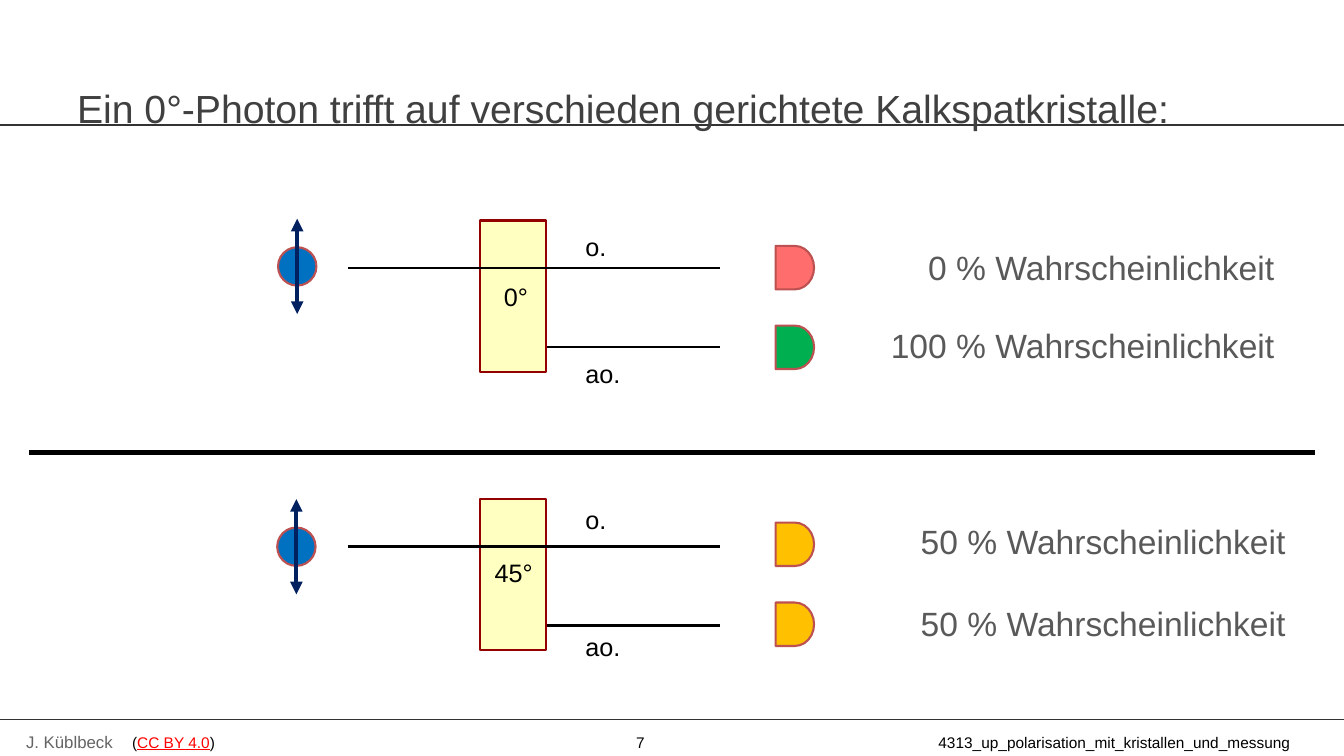
import dataclasses

import lxml.etree
import pptx
import pptx.dml.color
import pptx.enum.shapes
import pptx.enum.text
import pptx.oxml.ns
import pptx.util

Pt = pptx.util.Pt
Shape = pptx.enum.shapes.MSO_SHAPE
Align = pptx.enum.text.PP_ALIGN
Anchor = pptx.enum.text.MSO_ANCHOR


@dataclasses.dataclass(frozen=True)
class Theme:
    font: str = "Arial"
    title_size: float = 28
    result_size: float = 24
    label_size: float = 18
    author_size: float = 12
    footer_size: float = 11
    black: str = "000000"
    title: str = "404040"
    result: str = "595959"
    author: str = "646464"
    licence: str = "FF0000"
    rule: str = "333333"
    crystal: str = "FFFFC1"
    crystal_edge: str = "920000"
    photon: str = "0070C0"
    polarisation: str = "002060"
    outline: str = "BD5151"
    never: str = "FF6D6D"
    always: str = "00B050"
    maybe: str = "FFC000"


@dataclasses.dataclass(frozen=True)
class Experiment:
    angle: str
    angle_position: tuple
    crystal_top: float
    photon_center: tuple
    label_top: float
    detector_tops: tuple
    detector_colors: tuple
    results: tuple
    result_tops: tuple
    result_right: float


def color(value):
    return pptx.dml.color.RGBColor.from_string(value)


def add_element(parent, tag, **attributes):
    element = lxml.etree.SubElement(parent, pptx.oxml.ns.qn(tag))
    for name, value in attributes.items():
        element.set(name, str(value))
    return element


class SlideBuilder:
    def __init__(self, slide, theme):
        self.slide = slide
        self.theme = theme

    def text(self, text, left, top, width, height, size, text_color,
             align=Align.LEFT, anchor=Anchor.TOP, wrap=True, inset=True, space_before=0):
        """Add a one-paragraph text box and return its paragraph."""
        shape = self.slide.shapes.add_textbox(Pt(left), Pt(top), Pt(width), Pt(height))
        frame = shape.text_frame
        frame.word_wrap = wrap
        frame.vertical_anchor = anchor
        if not inset:
            frame.margin_left = frame.margin_right = frame.margin_top = frame.margin_bottom = 0
        frame.text = text
        paragraph = frame.paragraphs[0]
        paragraph.alignment = align
        paragraph.space_before = Pt(space_before)
        for run in paragraph.runs:
            self.format_run(run, size, text_color)
        return paragraph

    def format_run(self, run, size, text_color, underline=False):
        run.font.name = self.theme.font
        run.font.size = Pt(size)
        run.font.color.rgb = color(text_color)
        run.font.underline = underline

    def shape(self, kind, left, top, width, height, fill, edge):
        shape = self.slide.shapes.add_shape(kind, Pt(left), Pt(top), Pt(width), Pt(height))
        shape.shadow.inherit = False
        shape.fill.solid()
        shape.fill.fore_color.rgb = color(fill)
        shape.line.color.rgb = color(edge)
        shape.line.width = Pt(1.5)

    def line(self, start, end, line_color, width, double_arrow=False):
        connector = self.slide.shapes.add_connector(
            pptx.enum.shapes.MSO_CONNECTOR.STRAIGHT,
            Pt(start[0]), Pt(start[1]), Pt(end[0]), Pt(end[1]))
        connector.line.color.rgb = color(line_color)
        connector.line.width = Pt(width)
        if double_arrow:
            for tag in ("a:headEnd", "a:tailEnd"):
                add_element(connector.line._get_or_add_ln(), tag, type="triangle")
        add_element(connector._element.spPr, "a:effectLst")

    def footer(self):
        theme = self.theme
        self.text("J. Küblbeck", 11.5, 519, 112, 22, theme.author_size, theme.author)
        paragraph = self.text("(", 94.3, 523.4, 854, 13.7, theme.footer_size, theme.black, inset=False)
        tabs = add_element(paragraph._p.get_or_add_pPr(), "a:tabLst")
        for position in (360, 576):
            add_element(tabs, "a:tab", pos=int(Pt(position)), algn="l")
        licence = paragraph.add_run()
        licence.text = "CC BY 4.0"
        self.format_run(licence, theme.footer_size, theme.licence, underline=True)
        rest = paragraph.add_run()
        rest.text = ")\t7\t4313_up_polarisation_mit_kristallen_und_messung"
        self.format_run(rest, theme.footer_size, theme.black)

    def photon(self, x, y):
        self.shape(Shape.OVAL, x - 13.7, y - 13.7, 27.4, 27.4, self.theme.photon, self.theme.outline)
        self.line((x, y - 34), (x, y + 34), self.theme.polarisation, 3, double_arrow=True)

    def experiment(self, setup):
        theme = self.theme
        ordinary = setup.crystal_top + 34
        extraordinary = ordinary + 56.4
        self.shape(Shape.RECTANGLE, 342.7, setup.crystal_top, 47.5, 108,
                   theme.crystal, theme.crystal_edge)
        self.line((248.5, ordinary), (514, ordinary), theme.black, 2)
        self.line((391, extraordinary), (514, extraordinary), theme.black, 2)
        self.text(setup.angle, *setup.angle_position, 42, 29, theme.label_size, theme.black, wrap=False)
        self.photon(*setup.photon_center)
        for label, offset in (("o.", 0), ("ao.", 90.7)):
            self.text(label, 411, setup.label_top + offset, 114, 29, theme.label_size, theme.black)
        for top, fill in zip(setup.detector_tops, setup.detector_colors):
            self.shape(Shape.FLOWCHART_DELAY, 554, top, 27.5, 31, fill, theme.outline)
        for result, top in zip(setup.results, setup.result_tops):
            self.text(f"{result} % Wahrscheinlichkeit", setup.result_right - 330, top, 330, 45,
                      theme.result_size, theme.result, align=Align.RIGHT, space_before=3)


def main():
    presentation = pptx.Presentation()
    presentation.slide_width = Pt(960)
    presentation.slide_height = Pt(540)
    theme = Theme()
    builder = SlideBuilder(presentation.slides.add_slide(presentation.slide_layouts[6]), theme)

    builder.footer()
    for y in (514, 89.3):
        builder.line((0, y), (960, y), theme.rule, 0.75)
    builder.text("Ein 0°-Photon trifft auf verschieden gerichtete Kalkspatkristalle:",
                 48, 54, 864, 45.4, theme.title_size, theme.title, anchor=Anchor.MIDDLE)
    builder.line((21, 323.3), (939.5, 323.3), theme.black, 3.75)

    builder.experiment(Experiment(
        angle="0°", angle_position=(352.8, 197.3), crystal_top=157.5,
        photon_center=(212.3, 190.3), label_top=162,
        detector_tops=(175.7, 232.6), detector_colors=(theme.never, theme.always),
        results=(0, 100), result_tops=(172.8, 228.4), result_right=917.3))
    builder.experiment(Experiment(
        angle="45°", angle_position=(346.3, 394.6), crystal_top=356.4,
        photon_center=(211.7, 390.5), label_top=356.4,
        detector_tops=(373.3, 430.4), detector_colors=(theme.maybe, theme.maybe),
        results=(50, 50), result_tops=(368.6, 427), result_right=925.3))

    presentation.save("out.pptx")


if __name__ == "__main__":
    main()
